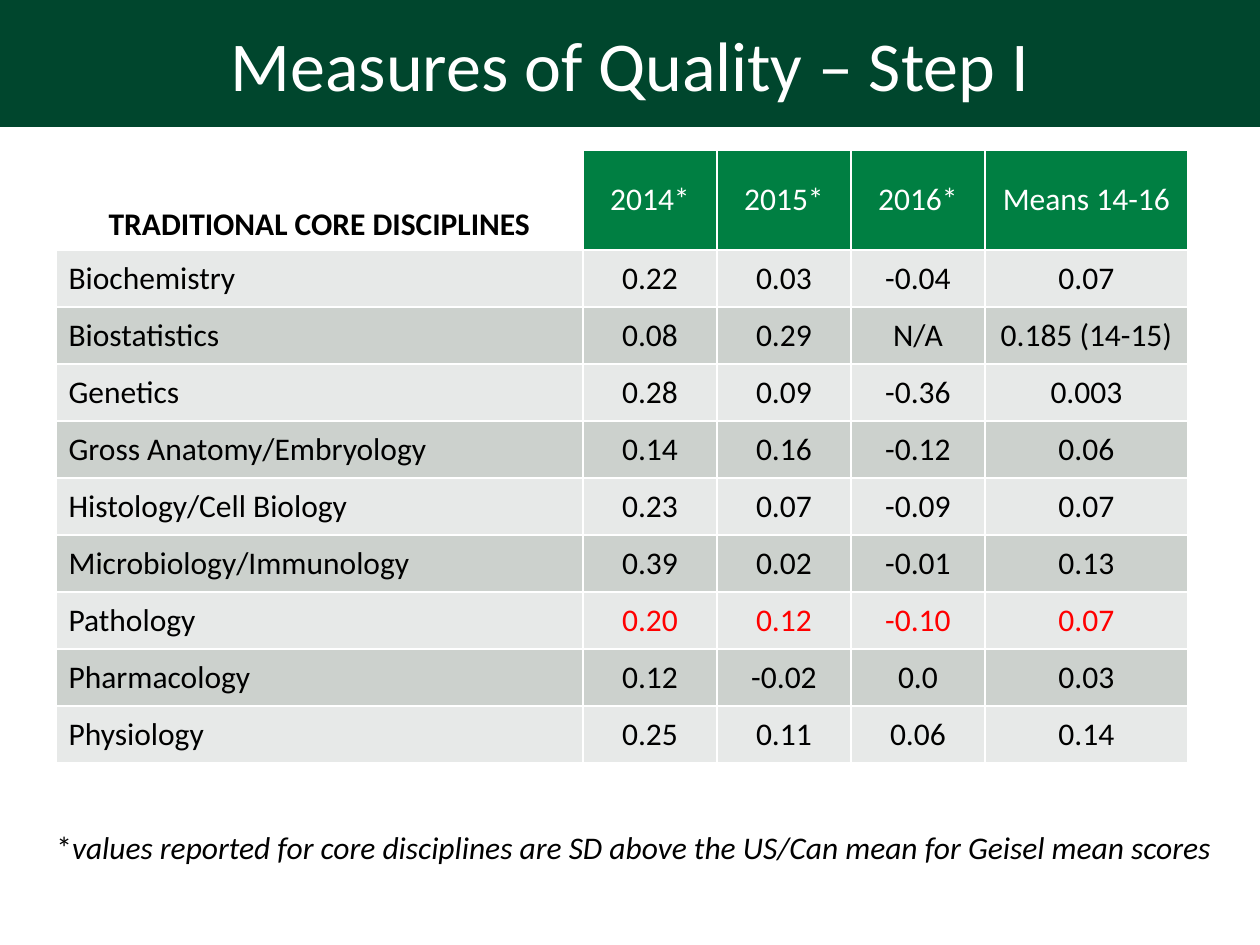
import pptx
import pptx.util
import pptx.dml.color
import pptx.enum.text
import pptx.oxml
import pptx.oxml.ns

SCALE = 914400 / 126
RGBColor = pptx.dml.color.RGBColor
BLACK = RGBColor(0x00, 0x00, 0x00)
WHITE = RGBColor(0xFF, 0xFF, 0xFF)
RED = RGBColor(0xFF, 0x00, 0x00)
DARK_GREEN = RGBColor(0x00, 0x46, 0x2D)
GREEN = RGBColor(0x00, 0x7F, 0x42)
LIGHT_GREY = RGBColor(0xE7, 0xE9, 0xE8)
GREY = RGBColor(0xCC, 0xD1, 0xCD)
ALIGN = pptx.enum.text.PP_ALIGN
ANCHOR = pptx.enum.text.MSO_ANCHOR


def px(*lengths):
    return [pptx.util.Emu(round(length * SCALE)) for length in lengths]


def write(frame, text, size=18, color=BLACK, bold=False, italic=False, align=ALIGN.LEFT):
    paragraph = frame.paragraphs[0]
    paragraph.alignment = align
    run = paragraph.add_run()
    run.text = text
    run.font.name = "Calibri"
    run.font.size = pptx.util.Pt(size)
    run.font.color.rgb = color
    run.font.bold = bold
    run.font.italic = italic


deck = pptx.Presentation()
deck.slide_width, deck.slide_height = px(1260, 945)
slide = deck.slides.add_slide(deck.slide_layouts[5])

heading = slide.shapes.title
heading.left, heading.top, heading.width, heading.height = px(0, 0, 1260, 127)
heading.fill.solid()
heading.fill.fore_color.rgb = DARK_GREEN
heading.text_frame.vertical_anchor = ANCHOR.MIDDLE
write(heading.text_frame, "Measures of Quality – Step I", size=40, color=WHITE, align=ALIGN.CENTER)

scores = [
    ["TRADITIONAL CORE DISCIPLINES", "2014*", "2015*", "2016*", "Means 14-16"],
    ["Biochemistry", "0.22", "0.03", "-0.04", "0.07"],
    ["Biostatistics", "0.08", "0.29", "N/A", "0.185 (14-15)"],
    ["Genetics", "0.28", "0.09", "-0.36", "0.003"],
    ["Gross Anatomy/Embryology", "0.14", "0.16", "-0.12", "0.06"],
    ["Histology/Cell Biology", "0.23", "0.07", "-0.09", "0.07"],
    ["Microbiology/Immunology", "0.39", "0.02", "-0.01", "0.13"],
    ["Pathology", "0.20", "0.12", "-0.10", "0.07"],
    ["Pharmacology", "0.12", "-0.02", "0.0", "0.03"],
    ["Physiology", "0.25", "0.11", "0.06", "0.14"],
]
column_widths = px(527, 134, 134, 134, 203)
row_heights = px(100, *[57] * 9)
left, top = px(56, 150)
grid = slide.shapes.add_table(
    len(scores), len(column_widths), left, top, sum(column_widths), sum(row_heights)
).table
grid.first_row = False
grid.horz_banding = False
for column, width in zip(grid.columns, column_widths):
    column.width = width
for row, height in zip(grid.rows, row_heights):
    row.height = height

for r, record in enumerate(scores):
    for c, entry in enumerate(record):
        cell = grid.cell(r, c)
        is_header = r == 0
        is_corner = is_header and c == 0
        cell.vertical_anchor = ANCHOR.BOTTOM if is_corner else ANCHOR.MIDDLE
        for side in ("lnL", "lnR", "lnT", "lnB"):
            cell.fill.background()
            cell._tc.get_or_add_tcPr().insert_element_before(
                pptx.oxml.parse_xml(
                    f'<a:{side} {pptx.oxml.ns.nsdecls("a")} w="12700">'
                    f'<a:solidFill><a:srgbClr val="{WHITE}"/></a:solidFill></a:{side}>'
                ),
                "a:noFill",
            )
        if not is_corner:
            cell.fill.solid()
            cell.fill.fore_color.rgb = GREEN if is_header else (GREY, LIGHT_GREY)[r % 2]
        if is_header and c > 0:
            color = WHITE
        elif record[0] == "Pathology" and c > 0:
            color = RED
        else:
            color = BLACK
        align = ALIGN.CENTER if is_header or c > 0 else ALIGN.LEFT
        write(cell.text_frame, entry, color=color, bold=is_corner, align=align)

footnote = slide.shapes.add_textbox(*px(44, 822, 1200, 50)).text_frame
footnote.word_wrap = False
footnote.auto_size = pptx.enum.text.MSO_AUTO_SIZE.SHAPE_TO_FIT_TEXT
write(footnote, "*")
write(
    footnote,
    "values reported for core disciplines are SD above the US/Can mean for Geisel mean scores",
    italic=True,
)

deck.save("out.pptx")
